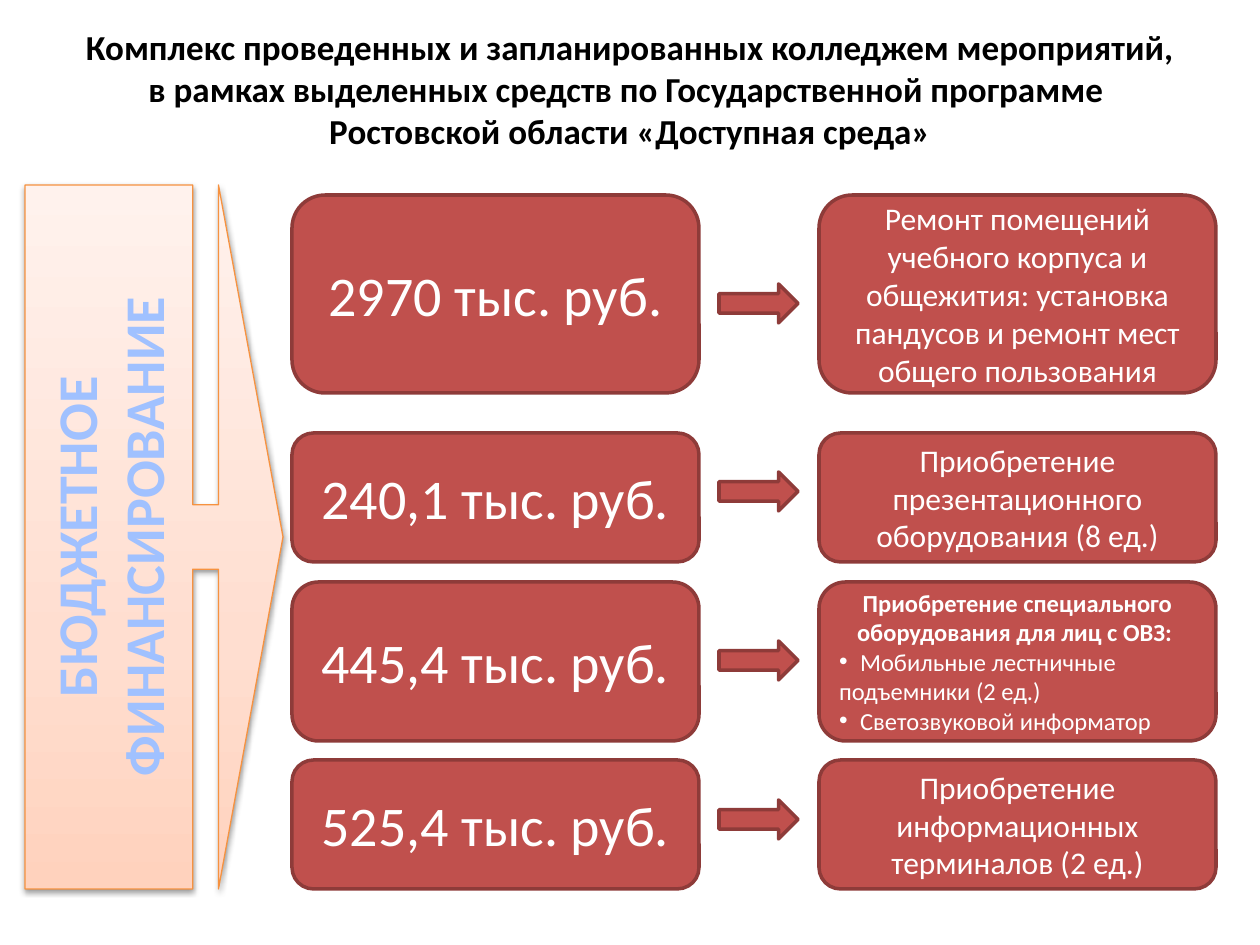
from dataclasses import dataclass
from typing import NamedTuple

from lxml.etree import SubElement
from pptx import Presentation
from pptx.dml.color import RGBColor
from pptx.enum.shapes import MSO_SHAPE as Shape
from pptx.enum.text import MSO_ANCHOR as Anchor, PP_ALIGN as Align
from pptx.oxml.ns import qn
from pptx.util import Emu, Pt

PX = 914400 / 126


@dataclass(frozen=True)
class Theme:
    font: str = "Calibri"
    black: str = "000000"
    white: str = "FFFFFF"
    box: str = "C0504D"
    box_line: str = "8E3B39"
    callout_line: str = "F69240"
    callout_fill: tuple = ((0, "FFD2BD"), (35, "FFDED0"), (100, "FFF2ED"))
    callout_text: tuple = ((0, "BFD3F9"), (9, "A0C1FF"), (50, "003D85"),
                           (79, "A0C1FF"), (100, "BFD3F9"))
    title: int = 20
    amount: int = 32
    body: int = 18
    small: int = 14


class Para(NamedTuple):
    text: str
    size: int
    bold: bool = False
    bullet: bool = False


class Row(NamedTuple):
    top: int
    height: int
    arrow_top: int
    amount: str
    purpose: list[Para]


class Column(NamedTuple):
    left: int
    width: int


T = Theme()
AMOUNT, ARROW, PURPOSE = Column(292, 407), Column(719, 79), Column(819, 397)
ARROW_HEIGHT = 39
BULLET_GAP = 21

TITLE = ["Комплекс проведенных и запланированных колледжем мероприятий,",
         "в рамках выделенных средств по Государственной программе ",
         "Ростовской области «Доступная среда»"]

ROWS = [
    Row(195, 198, 284, "2970 тыс. руб.", [
        Para("Ремонт помещений учебного корпуса и общежития: установка "
             "пандусов и ремонт мест общего пользования", T.body)]),
    Row(433, 129, 472, "240,1 тыс. руб.", [
        Para("Приобретение презентационного оборудования (8 ед.)", T.body)]),
    Row(582, 159, 641, "445,4 тыс. руб.", [
        Para("Приобретение специального оборудования для лиц с ОВЗ: ",
             T.small, bold=True),
        Para("Мобильные лестничные подъемники (2 ед.)", T.small, bullet=True),
        Para("Светозвуковой информатор", T.small, bullet=True)]),
    Row(760, 129, 800, "525,4 тыс. руб.", [
        Para("Приобретение информационных терминалов (2 ед.)", T.body)]),
]


def px(n: int) -> Emu:
    return Emu(round(n * PX))


def rgb(color: str) -> RGBColor:
    return RGBColor.from_string(color)


def add_run(p, text: str, size: int, color: str, bold: bool = False):
    r = p.add_run()
    r.text = text
    r.font.name, r.font.size, r.font.bold = T.font, Pt(size), bold
    r.font.color.rgb = rgb(color)
    return r


def set_gradient(fill, stops: tuple, angle: int) -> None:
    fill.gradient()
    grad = fill._xPr.find(qn("a:gradFill"))
    for child in list(grad):
        grad.remove(child)
    gs_lst = SubElement(grad, qn("a:gsLst"))
    for pos, color in stops:
        gs = SubElement(gs_lst, qn("a:gs"), pos=str(pos * 1000))
        SubElement(gs, qn("a:srgbClr"), val=color)
    SubElement(grad, qn("a:lin"), ang=str(angle * 60000), scaled="0")


def set_bullet(p) -> None:
    pPr = p._p.get_or_add_pPr()
    pPr.set("marL", "0")
    pPr.set("indent", "0")
    SubElement(pPr, qn("a:buFont"), typeface="Arial")
    SubElement(pPr, qn("a:buChar"), char="•")
    tabs = SubElement(pPr, qn("a:tabLst"))
    SubElement(tabs, qn("a:tab"), pos=str(px(BULLET_GAP)), algn="l")


def add_shape(s, kind: Shape, left: int, top: int, width: int, height: int,
              line: str = T.box_line, weight: float = 2):
    sp = s.shapes.add_shape(kind, px(left), px(top), px(width), px(height))
    sp.shadow.inherit = False
    sp.fill.solid()
    sp.fill.fore_color.rgb = rgb(T.box)
    sp.line.color.rgb = rgb(line)
    sp.line.width = Pt(weight)
    return sp


def add_box(s, col: Column, row: Row, paras: list[Para]) -> None:
    sp = add_shape(s, Shape.ROUNDED_RECTANGLE, col.left, row.top,
                   col.width, row.height)
    tf = sp.text_frame
    tf.word_wrap, tf.vertical_anchor = True, Anchor.MIDDLE
    for i, para in enumerate(paras):
        p = tf.add_paragraph() if i else tf.paragraphs[0]
        p.alignment = Align.LEFT if para.bullet else Align.CENTER
        if para.bullet:
            set_bullet(p)
        text = "\t" + para.text if para.bullet else para.text
        add_run(p, text, para.size, T.white, para.bold)


def add_callout(s) -> None:
    sp = add_shape(s, Shape.RIGHT_ARROW_CALLOUT, 25, 185, 258, 704,
                   T.callout_line, 0.75)
    for i, value in enumerate((0.25, 1.365, 0.25, 0.65)):
        sp.adjustments[i] = value
    set_gradient(sp.fill, T.callout_fill, 270)
    effects = sp._element.spPr.find(qn("a:effectLst"))
    shadow = SubElement(effects, qn("a:outerShdw"), blurRad=str(Pt(3.1)),
                        dist=str(Pt(1.6)), dir="5400000", rotWithShape="0")
    color = SubElement(shadow, qn("a:srgbClr"), val=T.black)
    SubElement(color, qn("a:alpha"), val="38000")
    tf = sp.text_frame
    tf.word_wrap, tf.vertical_anchor = True, Anchor.MIDDLE
    tf._txBody.bodyPr.set("vert", "vert270")
    p = tf.paragraphs[0]
    p.alignment = Align.CENTER
    r = add_run(p, "БЮДЖЕТНОЕ ФИНАНСИРОВАНИЕ", T.amount, T.white, True)
    set_gradient(r.font.fill, T.callout_text, 90)


def set_title(s) -> None:
    sp = s.shapes.title
    sp.left, sp.top, sp.width, sp.height = px(0), px(26), px(1260), px(125)
    tf = sp.text_frame
    tf.word_wrap, tf.vertical_anchor = True, Anchor.MIDDLE
    p = tf.paragraphs[0]
    p.alignment = Align.CENTER
    for i, line in enumerate(TITLE):
        if i:
            p.add_line_break()
        add_run(p, line, T.title, T.black, True)


def main() -> None:
    prs = Presentation()
    prs.slide_width, prs.slide_height = px(1260), px(945)
    s = prs.slides.add_slide(prs.slide_layouts[5])
    set_title(s)
    for row in ROWS:
        add_box(s, AMOUNT, row, [Para(row.amount, T.amount)])
        add_shape(s, Shape.RIGHT_ARROW, ARROW.left, row.arrow_top,
                  ARROW.width, ARROW_HEIGHT)
        add_box(s, PURPOSE, row, row.purpose)
    add_callout(s)
    prs.save("out.pptx")


if __name__ == "__main__":
    main()
